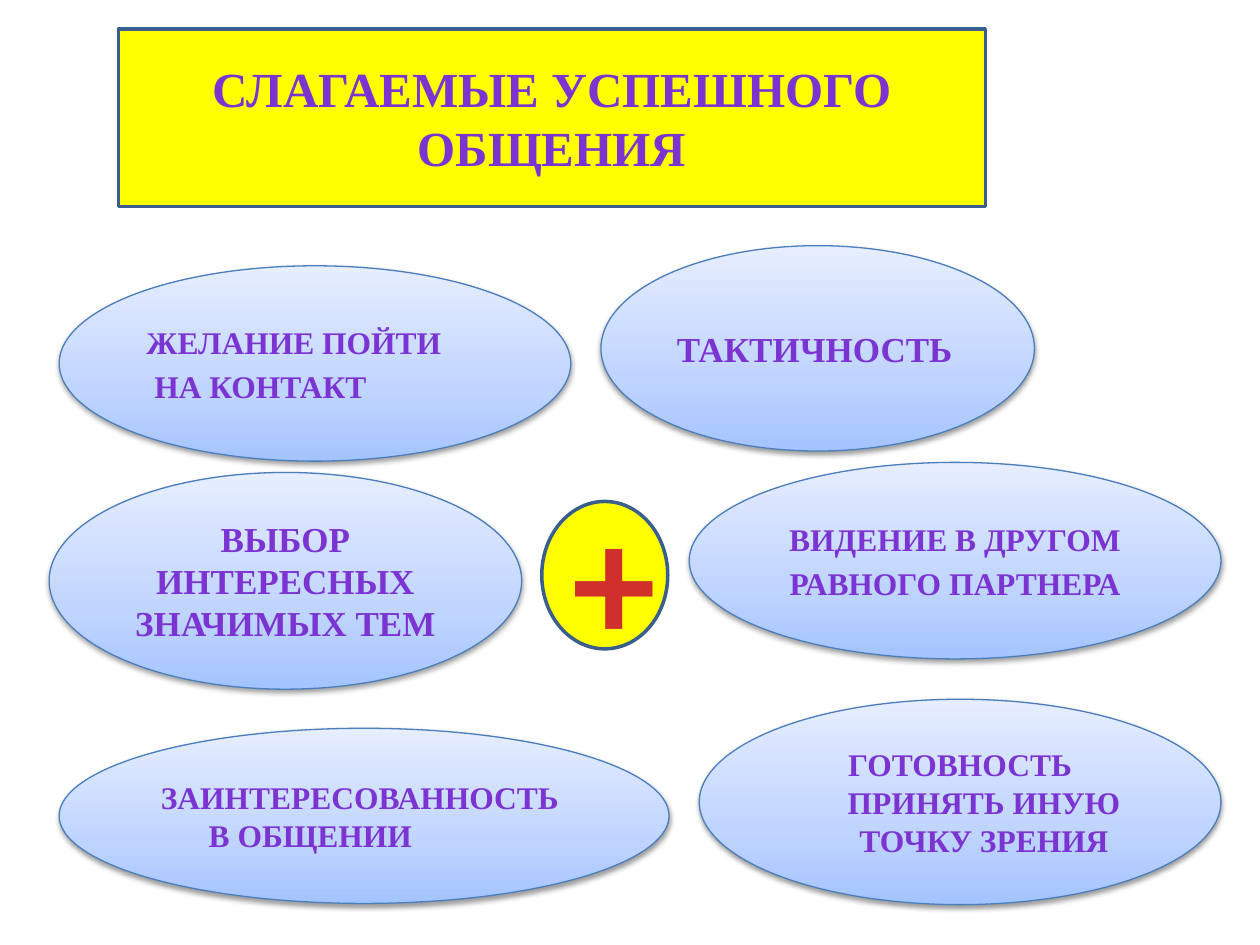
import pptx
import pptx.util
import pptx.dml.color
import pptx.enum.shapes
import pptx.enum.text
import pptx.oxml
import pptx.oxml.ns

Inches, Pt = pptx.util.Inches, pptx.util.Pt
RGB = pptx.dml.color.RGBColor
SHAPE = pptx.enum.shapes.MSO_SHAPE
ALIGN = pptx.enum.text.PP_ALIGN
qn = pptx.oxml.ns.qn
NS = pptx.oxml.ns.nsdecls("a")

YELLOW = RGB(0xFF, 0xFF, 0x00)
NAVY = RGB(0x3A, 0x5F, 0x8C)
BLUE = RGB(0x4B, 0x7E, 0xBC)
EDGE = RGB(0x5E, 0x45, 0x7C)
DARK = RGB(0x3D, 0x1B, 0x67)
PURPLE = ((0, DARK), (43, RGB(0x7B, 0x34, 0xD2)),
          (48, RGB(0x73, 0x30, 0xC4)), (100, DARK))
RED = ((0, RGB(0xFC, 0x7C, 0x7A)), (75, RGB(0xD0, 0x2F, 0x2C)),
       (100, RGB(0xC7, 0x05, 0x00)))
SKY = ((0, RGB(0xA4, 0xC4, 0xFF)), (35, RGB(0xBF, 0xD4, 0xFF)),
       (100, RGB(0xE6, 0xEE, 0xFF)))
SERIF = "Times New Roman"

OVALS = (
    ((5.55, 5.55, 4.14, 1.63), ("ГОТОВНОСТЬ ПРИНЯТЬ ИНУЮ ТОЧКУ ЗРЕНИЯ",),
     18, ALIGN.CENTER, True),
    ((5.47, 3.67, 4.22, 1.56), ("ВИДЕНИЕ В ДРУГОМ", "РАВНОГО ПАРТНЕРА"),
     18, ALIGN.CENTER, True),
    ((0.47, 5.78, 4.84, 1.39), ("ЗАИНТЕРЕСОВАННОСТЬ В ОБЩЕНИИ",),
     18, ALIGN.LEFT, True),
    ((0.47, 2.11, 4.06, 1.55), ("ЖЕЛАНИЕ ПОЙТИ", " НА КОНТАКТ"),
     18, ALIGN.LEFT, True),
    ((0.39, 3.75, 3.75, 1.72), ("ВЫБОР ИНТЕРЕСНЫХ ЗНАЧИМЫХ ТЕМ",),
     20, ALIGN.CENTER, False),
    ((4.77, 1.95, 3.44, 1.63), ("ТАКТИЧНОСТЬ",), 20, ALIGN.LEFT, True),
)


def shade(fill, node, stops, angle):
    """Give a fill, held by an XML node, a linear gradient."""
    fill.gradient()
    fill.gradient_angle = angle
    items = node.find(qn("a:gradFill")).find(qn("a:gsLst"))
    for old in list(items):
        items.remove(old)
    for place, color in stops:
        items.append(pptx.oxml.parse_xml(
            f'<a:gs {NS} pos="{place * 1000}"><a:srgbClr val="{color}"/></a:gs>'))


def style(par, size, face, stops, edge=None):
    """Format the runs of a paragraph with a gradient and an optional outline."""
    for run in par.runs:
        font = run.font
        font.size, font.name, font.bold = Pt(size), face, True
        node = run._r.get_or_add_rPr()
        shade(font.fill, node, stops, 270)
        if edge is not None:
            node.insert(0, pptx.oxml.parse_xml(
                f'<a:ln {NS} w="{Pt(0.71)}"><a:solidFill>'
                f'<a:srgbClr val="{edge}"/></a:solidFill></a:ln>'))


def frame(shape, color, width):
    """Set the line of a shape, drop its shadow and centre its text upright."""
    shape.line.color.rgb = color
    shape.line.width = Pt(width)
    shape.shadow.inherit = False
    text = shape.text_frame
    text.word_wrap = True
    text.auto_size = pptx.enum.text.MSO_AUTO_SIZE.NONE
    text.vertical_anchor = pptx.enum.text.MSO_ANCHOR.MIDDLE


def paint(shape):
    """Make a shape yellow with a navy line."""
    shape.fill.solid()
    shape.fill.fore_color.rgb = YELLOW
    frame(shape, NAVY, 2)


def title(slide, box):
    """Place the title banner in its box."""
    shape = slide.shapes.title
    shape.left, shape.top, shape.width, shape.height = map(Inches, box)
    paint(shape)
    shape.text_frame.text = "СЛАГАЕМЫЕ УСПЕШНОГО ОБЩЕНИЯ"
    par = shape.text_frame.paragraphs[0]
    par.alignment = ALIGN.CENTER
    style(par, 28, SERIF, PURPLE, EDGE)


def oval(slide, box, lines, size, align, hang):
    """Place a blue oval with its lines of text in its box."""
    shape = slide.shapes.add_shape(SHAPE.OVAL, *map(Inches, box))
    node = shape._element.spPr
    shade(shape.fill, node, SKY, 90)
    frame(shape, BLUE, 0.75)
    node.find(qn("a:effectLst")).append(pptx.oxml.parse_xml(
        f'<a:outerShdw {NS} blurRad="{Pt(3.1)}" dist="{Pt(1.6)}" dir="5400000" '
        'rotWithShape="0"><a:srgbClr val="000000"><a:alpha val="38000"/>'
        '</a:srgbClr></a:outerShdw>'))
    shape.text_frame.text = "\n".join(lines)
    for rank, par in enumerate(shape.text_frame.paragraphs):
        par.alignment = align
        if hang:
            props = par._p.get_or_add_pPr()
            props.set("marL", str(Inches(0.38)))
            props.set("indent", str(-Inches(0.38)))
        if rank:
            par.space_before = Pt(size * 0.2)
        style(par, size, SERIF, PURPLE, EDGE)


def plus(slide, box):
    """Place the yellow plus sign in its box."""
    shape = slide.shapes.add_shape(SHAPE.OVAL, *map(Inches, box))
    paint(shape)
    shape.text_frame.text = "+"
    par = shape.text_frame.paragraphs[0]
    par.alignment = ALIGN.CENTER
    style(par, 96, "Calibri", RED)


def main():
    """Build the slide and save it."""
    deck = pptx.Presentation()
    deck.slide_width, deck.slide_height = Inches(10), Inches(7.5)
    slide = deck.slides.add_slide(deck.slide_layouts[5])
    title(slide, (0.94, 0.23, 6.88, 1.41))
    for item in OVALS:
        oval(slide, *item)
    plus(slide, (4.3, 3.98, 1, 1.17))
    deck.save("out.pptx")


if __name__ == "__main__":
    main()
